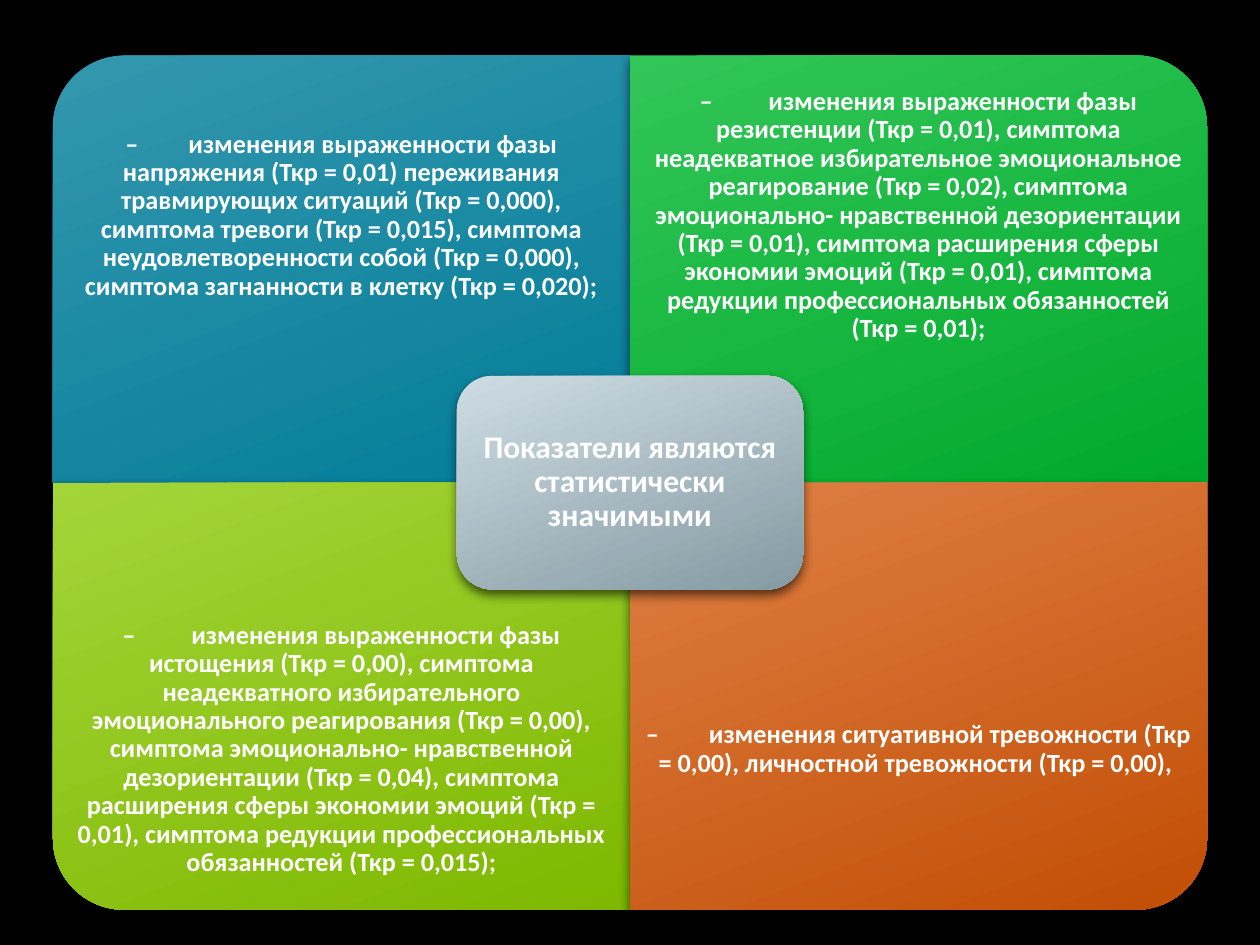
from lxml.etree import SubElement
from pptx import Presentation
from pptx.dml.color import RGBColor
from pptx.enum.shapes import MSO_SHAPE
from pptx.enum.text import MSO_ANCHOR, PP_ALIGN
from pptx.oxml.ns import qn
from pptx.util import Inches, Pt

# Quadrants: column, row, rotation, gradient start and end, text
QUADRANTS = [
    (0, 0, 270, "3497AE", "027C98",
     "–\tизменения выраженности фазы напряжения (Ткр = 0,01) переживания "
     "травмирующих ситуаций (Ткр = 0,000), симптома тревоги (Ткр = 0,015), "
     "симптома неудовлетворенности собой (Ткр = 0,000), симптома загнанности "
     "в клетку (Ткр = 0,020);"),
    (1, 0, 0, "32C658", "00A92B",
     "–\t изменения выраженности фазы резистенции (Ткр = 0,01), симптома "
     "неадекватное избирательное эмоциональное реагирование (Ткр = 0,02), "
     "симптома эмоционально- нравственной дезориентации (Ткр = 0,01), симптома "
     "расширения сферы экономии эмоций (Ткр = 0,01), симптома редукции "
     "профессиональных обязанностей (Ткр = 0,01);"),
    (0, 1, 180, "A3D539", "7EB800",
     "–\t изменения выраженности фазы истощения (Ткр = 0,00), симптома "
     "неадекватного избирательного эмоционального реагирования (Ткр = 0,00), "
     "симптома эмоционально- нравственной дезориентации (Ткр = 0,04), симптома "
     "расширения сферы экономии эмоций (Ткр = 0,01), симптома редукции "
     "профессиональных обязанностей (Ткр = 0,015);"),
    (1, 1, 90, "DF8045", "C24E05",
     "–\tизменения ситуативной тревожности (Ткр = 0,00), личностной "
     "тревожности (Ткр = 0,00), "),
]
CENTER = ("CEDDE3", "859AA3", "Показатели являются статистически значимыми")

LEFT, TOP = 0.42, 0.44
QUAD_W, QUAD_H = 4.58, 3.39
TEXT_H = 0.75 * QUAD_H
CENTER_W, CENTER_H = 0.6 * QUAD_W, 0.5 * QUAD_H


def rgb(value):
    return RGBColor.from_string(value)


def add_tile(slide, kind, cx, cy, w, h, start, end, rotation=0):
    """Add a shape w by h as seen on the slide, centred on (cx, cy)."""
    if rotation % 180:
        w, h = h, w
    s = slide.shapes.add_shape(kind, Inches(cx - w / 2), Inches(cy - h / 2),
                               Inches(w), Inches(h))
    s.rotation = rotation
    s.line.fill.background()
    s.fill.gradient()
    s.fill.gradient_angle = 360 - 69
    for stop, color in zip(s.fill.gradient_stops, (start, end)):
        stop.color.rgb = rgb(color)
    spPr = s._element.spPr
    spPr.find(qn("a:gradFill")).set("rotWithShape", "0")

    s.shadow.inherit = False
    shadow = SubElement(spPr.find(qn("a:effectLst")), qn("a:outerShdw"),
                        blurRad=str(Pt(6)), dist=str(Pt(3)), dir="5400000",
                        rotWithShape="0")
    black = SubElement(shadow, qn("a:srgbClr"), val="000000")
    SubElement(black, qn("a:alpha"), val="60000")
    return s


def write(s, text, size, inset, color="FFFFFF"):
    tf = s.text_frame
    tf.word_wrap = True
    tf.vertical_anchor = MSO_ANCHOR.MIDDLE
    tf.margin_left = tf.margin_right = Inches(inset)
    tf.margin_top = tf.margin_bottom = Inches(inset)
    p = tf.paragraphs[0]
    p.alignment = PP_ALIGN.CENTER
    p.line_spacing = 0.9
    r = p.add_run()
    r.text = text
    r.font.name = "Calibri"
    r.font.size = Pt(size)
    r.font.bold = True
    r.font.color.rgb = rgb(color)


prs = Presentation()
prs.slide_width, prs.slide_height = Inches(10), Inches(7.5)
slide = prs.slides.add_slide(prs.slide_layouts[6])
slide.background.fill.solid()
slide.background.fill.fore_color.rgb = rgb("000000")

for col, row, rotation, start, end, text in QUADRANTS:
    x, y = LEFT + col * QUAD_W, TOP + row * QUAD_H
    add_tile(slide, MSO_SHAPE.ROUND_1_RECTANGLE, x + QUAD_W / 2, y + QUAD_H / 2,
             QUAD_W, QUAD_H, start, end, rotation)
    # Text keeps to the outer three quarters, clear of the central tile
    text_y = y + row * (QUAD_H - TEXT_H)
    box = slide.shapes.add_textbox(Inches(x), Inches(text_y),
                                   Inches(QUAD_W), Inches(TEXT_H))
    write(box, text, size=15, inset=0.12)

start, end, text = CENTER
center = add_tile(slide, MSO_SHAPE.ROUNDED_RECTANGLE, LEFT + QUAD_W, TOP + QUAD_H,
                  CENTER_W, CENTER_H, start, end)
write(center, text, size=18, inset=0.07)

prs.save("out.pptx")
